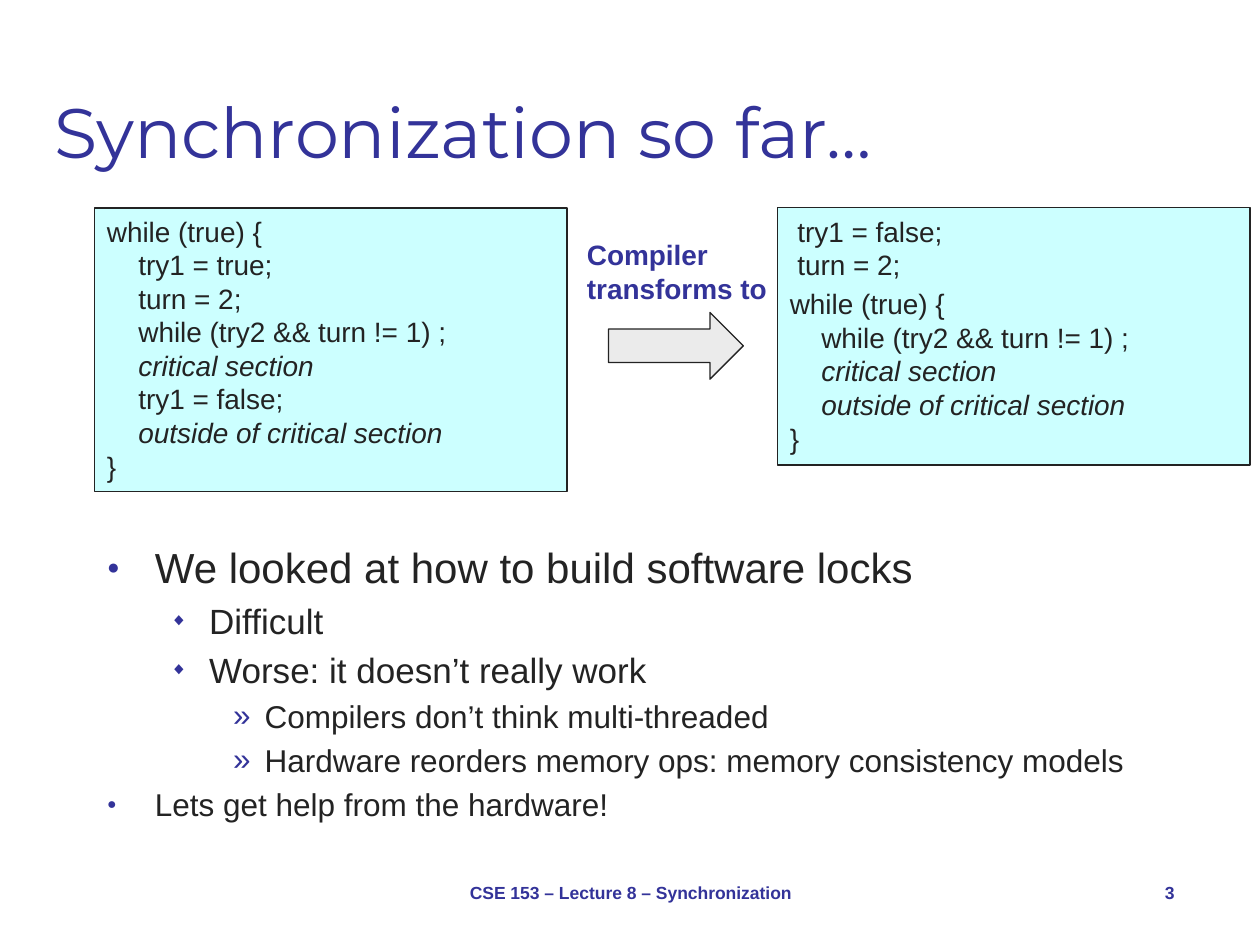
import pptx
import pptx.dml.color
import pptx.enum.shapes
import pptx.enum.text
import pptx.oxml
import pptx.oxml.ns
import pptx.util
from pptx.util import Inches

ALIGN = pptx.enum.text.PP_ALIGN
ANCHOR = pptx.enum.text.MSO_ANCHOR
SHAPES = pptx.enum.shapes.MSO_SHAPE
INDIGO, INK, CYAN, GREY = "333399", "232323", "CCFFFF", "EBEBEB"
STEP = 0.25

ENTRY_CODE = [
    (0, "while (true) {", False),
    (STEP, "try1 = true;", False),
    (STEP, "turn = 2;", False),
    (STEP, "while (try2 && turn != 1) ;", False),
    (STEP, "critical section", True),
    (STEP, "try1 = false;", False),
    (STEP, "outside of critical section", True),
    (0, "}", False),
]
COMPILED_CODE = [
    (0.06, "try1 = false;", False),
    (0.06, "turn = 2;", False),
    (0, "while (true) {", False),
    (STEP, "while (try2 && turn != 1) ;", False),
    (STEP, "critical section", True),
    (STEP, "outside of critical section", True),
    (0, "}", False),
]
POINTS = [
    (0, "We looked at how to build software locks", 24),
    (1, "Difficult", 20),
    (1, "Worse: it doesn’t really work", 20),
    (2, "Compilers don’t think multi-threaded", 18),
    (2, "Hardware reorders memory ops: memory consistency models", 18),
    (0, "Lets get help from the hardware!", 18),
]
BULLETS = [("●", 50, 0.38, 0.38), ("◆", 50, 0.81, 0.31), ("»", 100, 1.25, 0.25)]


def color(code):
    """Return the RGB colour for a hex string."""
    return pptx.dml.color.RGBColor.from_string(code)


def place(part, left, top, width, height):
    """Move and size a shape, in inches."""
    part.left, part.top = Inches(left), Inches(top)
    part.width, part.height = Inches(width), Inches(height)


def add_run(paragraph, wording, size, ink=INK, font="Arial", bold=False, italic=False):
    """Add one formatted run to a paragraph."""
    run = paragraph.add_run()
    run.text = wording
    run.font.name, run.font.size = font, pptx.util.Pt(size)
    run.font.bold, run.font.italic = bold, italic
    run.font.color.rgb = color(ink)


def paragraphs(frame, count):
    """Yield the first paragraph of a frame and then new ones."""
    yield frame.paragraphs[0]
    for _ in range(count - 1):
        yield frame.add_paragraph()


def set_indent(paragraph, left, hanging=0):
    """Set the left margin and hanging indent of a paragraph."""
    properties = paragraph._p.get_or_add_pPr()
    properties.set("marL", str(Inches(left)))
    properties.set("indent", str(-Inches(hanging)))


def set_bullet(paragraph, glyph, percent):
    """Give a paragraph a coloured bullet."""
    namespace = pptx.oxml.ns.nsdecls("a")
    for xml in (
        f'<a:buClr {namespace}><a:srgbClr val="{INDIGO}"/></a:buClr>',
        f'<a:buSzPct {namespace} val="{percent * 1000}"/>',
        f'<a:buFont {namespace} typeface="Arial"/>',
        f'<a:buChar {namespace} char="{glyph}"/>',
    ):
        paragraph._p.get_or_add_pPr().append(pptx.oxml.parse_xml(xml))


def fill_title(title):
    """Place and write the slide title."""
    place(title, 0.33, 0.17, 9.33, 1.25)
    frame = title.text_frame
    frame.vertical_anchor = ANCHOR.BOTTOM
    frame.auto_size = pptx.enum.text.MSO_AUTO_SIZE.NONE
    frame.paragraphs[0].alignment = ALIGN.LEFT
    add_run(frame.paragraphs[0], "Synchronization so far…", 40, INDIGO, "Montserrat")


def fill_points(body):
    """Place and write the bulleted points."""
    place(body, 0.75, 4.25, 8.67, 2.33)
    frame = body.text_frame
    frame.auto_size = pptx.enum.text.MSO_AUTO_SIZE.NONE
    for paragraph, (level, wording, size) in zip(paragraphs(frame, len(POINTS)), POINTS):
        glyph, percent, left, hanging = BULLETS[level]
        paragraph.level = level
        paragraph.line_spacing = pptx.util.Pt(size * 1.2)
        paragraph.space_before = pptx.util.Pt(size * 0.2)
        set_indent(paragraph, left, hanging)
        set_bullet(paragraph, glyph, percent)
        add_run(paragraph, wording, size)


def add_outlined(slide, kind, fill, *box):
    """Add a filled preset shape with a thin dark outline."""
    outlined = slide.shapes.add_shape(kind, *map(Inches, box))
    outlined.shadow.inherit = False
    outlined.fill.solid()
    outlined.fill.fore_color.rgb = color(fill)
    outlined.line.color.rgb = color(INK)
    outlined.line.width = pptx.util.Pt(0.75)
    return outlined


def add_code(slide, left, height, lines, gap_before=None):
    """Add a code panel, with an optional gap before one line."""
    panel = add_outlined(slide, SHAPES.RECTANGLE, CYAN, left, 1.65, 3.75, height)
    frame = panel.text_frame
    frame.word_wrap = True
    frame.vertical_anchor = ANCHOR.TOP
    rows = zip(paragraphs(frame, len(lines)), lines)
    for number, (paragraph, (indent, wording, italic)) in enumerate(rows):
        paragraph.alignment = ALIGN.LEFT
        paragraph.line_spacing = pptx.util.Pt(19.2)
        paragraph.space_before = pptx.util.Pt(3.2 if number == gap_before else 0)
        set_indent(paragraph, indent)
        add_run(paragraph, wording, 16, italic=italic)


def add_label(slide, wording, size, box, align=ALIGN.LEFT, anchor=ANCHOR.TOP):
    """Add a bold indigo text box."""
    frame = slide.shapes.add_textbox(*map(Inches, box)).text_frame
    frame.word_wrap = True
    frame.vertical_anchor = anchor
    frame.paragraphs[0].alignment = align
    frame.paragraphs[0].line_spacing = pptx.util.Pt(size * 1.2)
    add_run(frame.paragraphs[0], wording, size, INDIGO, bold=True)


def main():
    """Build the slide and save it."""
    deck = pptx.Presentation()
    deck.slide_width, deck.slide_height = Inches(10), Inches(7.5)
    slide = deck.slides.add_slide(deck.slide_layouts[1])
    fill_title(slide.shapes.title)
    fill_points(slide.placeholders[1])
    add_label(slide, "CSE 153 – Lecture 8 – Synchronization", 10,
              (3.42, 6.83, 3.17, 0.5), ALIGN.CENTER, ANCHOR.MIDDLE)
    add_label(slide, "3", 10, (8.75, 6.83, 0.67, 0.5), ALIGN.RIGHT, ANCHOR.MIDDLE)
    add_code(slide, 0.75, 2.25, ENTRY_CODE)
    add_code(slide, 6.17, 2.04, COMPILED_CODE, gap_before=2)
    add_outlined(slide, SHAPES.RIGHT_ARROW, GREY, 4.83, 2.48, 1.07, 0.53)
    add_label(slide, "Compiler transforms to", 16, (4.56, 1.84, 2.03, 0.64))
    deck.save("out.pptx")


if __name__ == "__main__":
    main()
